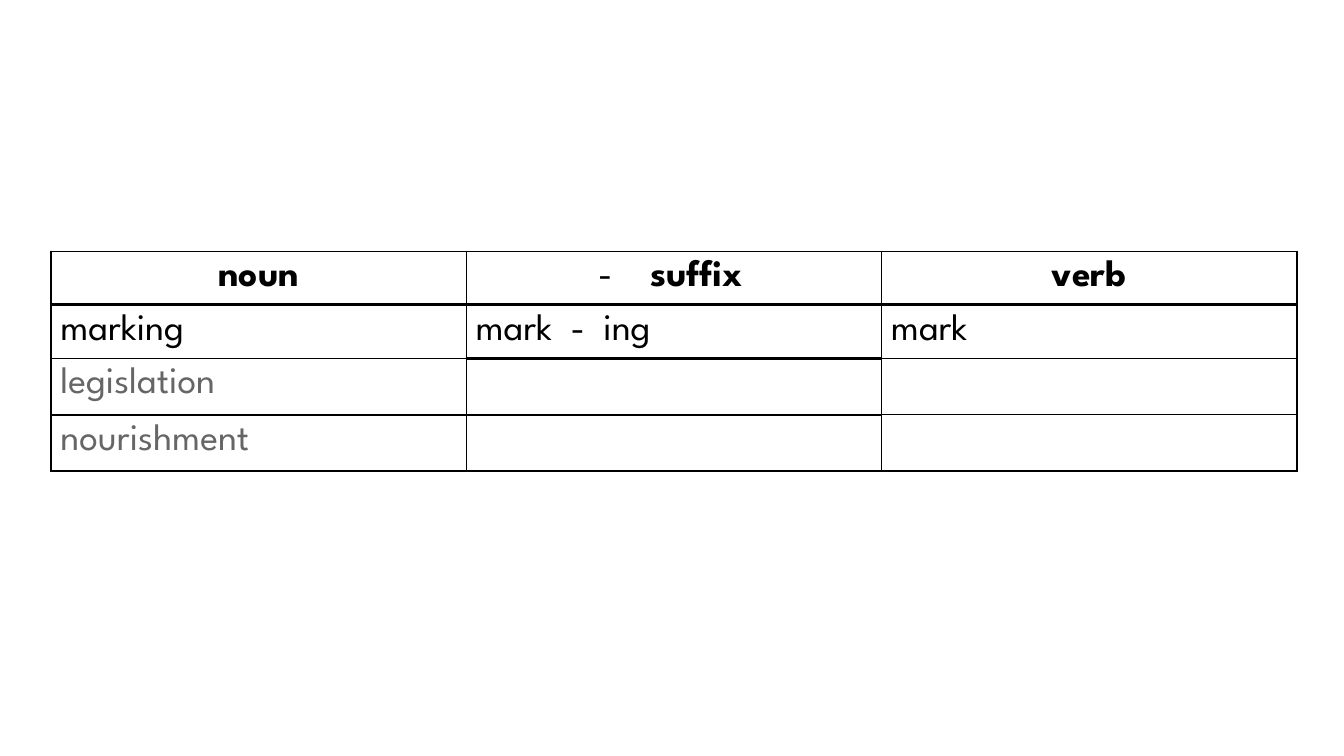
from lxml.etree import SubElement
from pptx import Presentation
from pptx.dml.color import RGBColor
from pptx.enum.text import PP_ALIGN
from pptx.oxml.ns import qn
from pptx.util import Inches, Pt

COLORS = {"ink": "000000", "muted": "666666"}
FONT = "League Spartan"
WORDS = [
    ("noun", "suffix", "verb"),
    ("marking", "mark  -  ing", "mark"),
    ("legislation", "", ""),
    ("nourishment", "", ""),
]
ROW_HEIGHTS = [0.39, 0.4, 0.42, 0.42]
COLUMN_WIDTH = 3.09
# Line widths in points between rows, one value per column
RULES = [(1, 1, 1), (2.25, 2.25, 2.25), (1, 1.5, 1), (1, 1, 0.75), (1, 1, 1)]


def set_borders(cell, top, bottom):
    properties = cell._tc.get_or_add_tcPr()
    for side, width in (("L", 1), ("R", 1), ("T", top), ("B", bottom)):
        line = SubElement(properties, qn(f"a:ln{side}"), w=str(Pt(width)))
        fill = SubElement(line, qn("a:solidFill"))
        SubElement(fill, qn("a:srgbClr"), val=COLORS["ink"])
        SubElement(line, qn("a:prstDash"), val="solid")


def add_dash_bullet(paragraph):
    properties = paragraph._p.get_or_add_pPr()
    properties.set("marL", str(Inches(0.5)))
    properties.set("marR", str(Inches(0.16)))
    properties.set("indent", str(Inches(-0.39)))
    color = SubElement(properties, qn("a:buClr"))
    SubElement(color, qn("a:srgbClr"), val=COLORS["ink"])
    SubElement(properties, qn("a:buFont"), typeface=FONT)
    SubElement(properties, qn("a:buChar"), char="-")


def write_word(cell, word, header, color):
    cell.margin_left = cell.margin_right = Inches(0.07)
    cell.margin_top = cell.margin_bottom = Inches(0.07)
    paragraph = cell.text_frame.paragraphs[0]
    paragraph.text = word
    paragraph.alignment = PP_ALIGN.CENTER if header else PP_ALIGN.LEFT
    if word == "suffix":
        add_dash_bullet(paragraph)
    font = paragraph.runs[0].font
    font.name, font.size, font.bold = FONT, Pt(20), header
    font.color.rgb = RGBColor.from_string(color)


prs = Presentation()
prs.slide_width = Inches(10)
prs.slide_height = prs.slide_width * 9 // 16
slide = prs.slides.add_slide(prs.slide_layouts[6])
table = slide.shapes.add_table(
    len(WORDS), len(WORDS[0]), Inches(0.38), Inches(1.87),
    Inches(COLUMN_WIDTH * len(WORDS[0])), Inches(sum(ROW_HEIGHTS)),
).table
table.first_row = table.horz_banding = False

for column in table.columns:
    column.width = Inches(COLUMN_WIDTH)
for r, (words, height) in enumerate(zip(WORDS, ROW_HEIGHTS)):
    table.rows[r].height = Inches(height)
    for c, word in enumerate(words):
        cell = table.cell(r, c)
        set_borders(cell, RULES[r][c], RULES[r + 1][c])
        cell.fill.background()
        if word:
            write_word(cell, word, r == 0, COLORS["ink" if r < 2 else "muted"])

prs.save("out.pptx")
